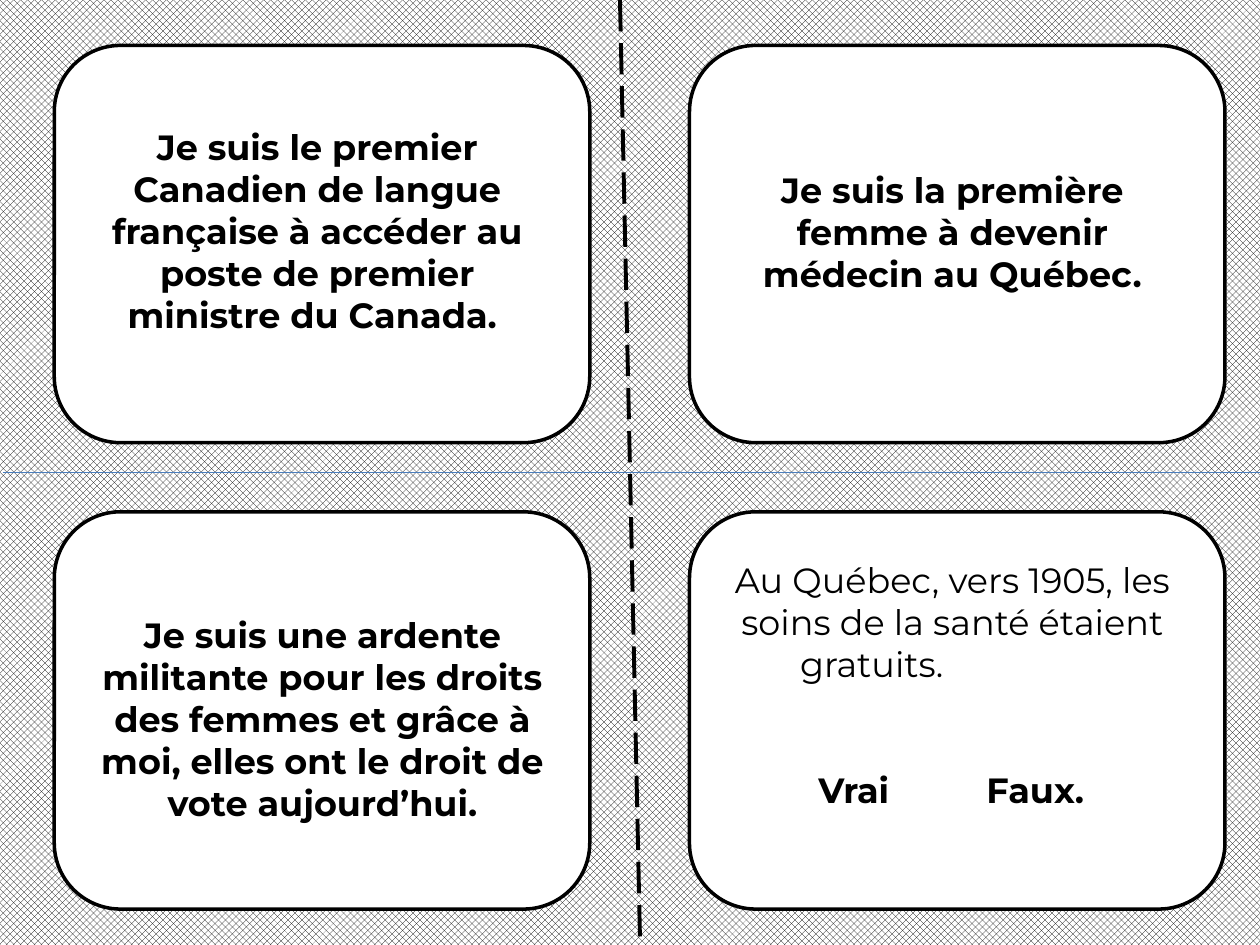
from lxml import etree
from pptx import Presentation
from pptx.dml.color import RGBColor
from pptx.enum.dml import MSO_LINE, MSO_PATTERN
from pptx.enum.shapes import MSO_CONNECTOR, MSO_SHAPE
from pptx.enum.text import MSO_AUTO_SIZE, PP_ALIGN
from pptx.oxml.ns import qn
from pptx.util import Pt

LONG_DASH = MSO_LINE.LONG_DASH
DIAMONDS = MSO_PATTERN.SOLID_DIAMOND
STRAIGHT = MSO_CONNECTOR.STRAIGHT
ROUNDED = MSO_SHAPE.ROUNDED_RECTANGLE
FIT_TEXT = MSO_AUTO_SIZE.SHAPE_TO_FIT_TEXT
CENTER, LEFT = PP_ALIGN.CENTER, PP_ALIGN.LEFT

COLORS = {"ink": "000000", "paper": "FFFFFF", "fold": "4B7EBC"}
COLUMNS, ROWS = (31, 394), (26, 292.5)
CARD_SIZE = (306, 227)


def color(key):
    return RGBColor.from_string(COLORS[key])


def write_paragraph(paragraph, text, font="Montserrat", size=20, bold=True,
                    align=CENTER, indent=0, before=0, tabs=()):
    paragraph.alignment = align
    paragraph.space_before = Pt(before)
    properties = paragraph._p.get_or_add_pPr()
    if indent:
        properties.set("marL", str(Pt(indent)))
    if tabs:
        stops = etree.SubElement(properties, qn("a:tabLst"))
        for position in tabs:
            etree.SubElement(stops, qn("a:tab"), pos=str(Pt(position)), algn="l")
    run = paragraph.add_run()
    run.text = text
    run.font.name = font
    run.font.size = Pt(size)
    run.font.bold = bold
    run.font.color.rgb = color("ink")


class CardSheet:
    def __init__(self, slide):
        self.slide = slide
        fill = slide.background.fill
        fill.patterned()
        fill.pattern = DIAMONDS
        fill.fore_color.rgb = color("ink")
        fill.back_color.rgb = color("paper")

    def divider(self, start, end, key, width, dash=None):
        line = self.slide.shapes.add_connector(
            STRAIGHT, *(Pt(value) for value in start + end))
        line.line.color.rgb = color(key)
        line.line.width = Pt(width)
        if dash:
            line.line.dash_style = dash
        etree.SubElement(line._element.spPr, qn("a:effectLst"))

    def card(self, left, top):
        card = self.slide.shapes.add_shape(
            ROUNDED, *(Pt(value) for value in (left, top) + CARD_SIZE))
        card.shadow.inherit = False
        card.fill.solid()
        card.fill.fore_color.rgb = color("paper")
        card.line.color.rgb = color("ink")
        card.line.width = Pt(2)

    def text(self, bounds, *paragraphs):
        box = self.slide.shapes.add_textbox(*(Pt(value) for value in bounds))
        frame = box.text_frame
        frame.word_wrap = True
        frame.auto_size = FIT_TEXT
        for index, (words, style) in enumerate(paragraphs):
            paragraph = frame.add_paragraph() if index else frame.paragraphs[0]
            write_paragraph(paragraph, words, **style)


def main():
    deck = Presentation()
    deck.slide_width, deck.slide_height = Pt(720), Pt(540)
    sheet = CardSheet(deck.slides.add_slide(deck.slide_layouts[6]))

    sheet.divider((354.3, 0), (365.8, 540), "ink", 2.25, LONG_DASH)
    sheet.divider((1.5, 270), (735.8, 270), "fold", 0.75)
    for top in ROWS:
        for left in COLUMNS:
            sheet.card(left, top)

    riddles = [
        ((48.2, 68.4, 266.4, 128.2),
         "Je suis le premier Canadien de langue française à accéder au poste "
         "de premier ministre du Canada. "),
        ((39.6, 347, 289.4, 128.2),
         "Je suis une ardente militante pour les droits des femmes et grâce "
         "à moi, elles ont le droit de vote aujourd’hui."),
        ((411.1, 92.9, 266.4, 79.9),
         "Je suis la première femme à devenir médecin au Québec."),
    ]
    for bounds, riddle in riddles:
        sheet.text(bounds, (riddle, {}))

    sheet.text(
        (411.1, 315.4, 266.4, 152.6),
        ("Au Québec, vers 1905, les soins de la santé étaient", {"bold": False}),
        ("gratuits.", {"bold": False, "align": LEFT, "indent": 39}),
        ("\tVrai\tFaux.", {"align": LEFT, "before": 48, "tabs": (49.5, 145.5)}))

    deck.save("out.pptx")


if __name__ == "__main__":
    main()
